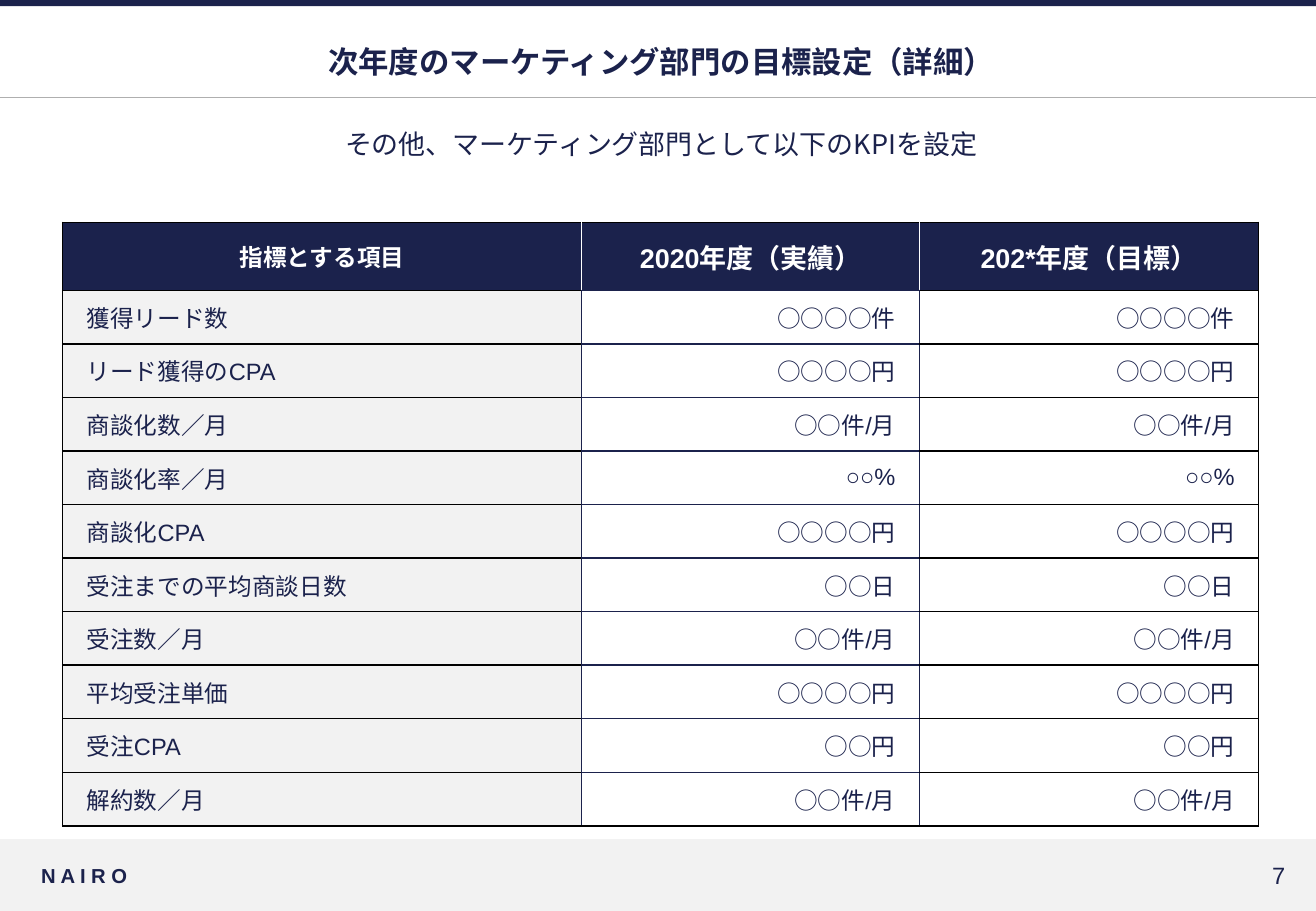
import pptx
import pptx.dml.color
import pptx.enum.shapes
import pptx.enum.text
import pptx.oxml
import pptx.oxml.ns
import pptx.util
from dataclasses import dataclass

Cm, Pt = pptx.util.Cm, pptx.util.Pt
ALIGN = pptx.enum.text.PP_ALIGN
ANCHOR = pptx.enum.text.MSO_ANCHOR
qn = pptx.oxml.ns.qn


@dataclass(frozen=True)
class Theme:
    navy: str = "1B224C"
    pale: str = "F2F2F2"
    white: str = "FFFFFF"
    black: str = "000000"
    rule: str = "AFAFAF"
    latin: str = "Arial"
    cjk: str = "Noto Sans CJK JP"
    title: int = 18
    lead: int = 16
    body: int = 14
    brand: int = 12


THEME = Theme()
WIDTH, HEIGHT = 27.51, 19.05
COLUMNS = (10.85, 7.06, 7.09)
HEADER_HEIGHT, ROW_HEIGHT = 1.42, 1.12

HEADER = (("指標とする項目", THEME.body), ("2020年度（実績）", THEME.lead),
          ("202*年度（目標）", THEME.lead))
# Each indicator with the value shown in both year columns
KPIS = (
    ("獲得リード数", "○○○○件"),
    ("リード獲得のCPA", "○○○○円"),
    ("商談化数／月", "○○件/月"),
    ("商談化率／月", "○○%"),
    ("商談化CPA", "○○○○円"),
    ("受注までの平均商談日数", "○○日"),
    ("受注数／月", "○○件/月"),
    ("平均受注単価", "○○○○円"),
    ("受注CPA", "○○円"),
    ("解約数／月", "○○件/月"),
)


def rgb(color):
    return pptx.dml.color.RGBColor.from_string(color)


def add_run(p, text, size, color=THEME.navy, bold=False, font=THEME.latin):
    r = p.add_run()
    r.text = text
    r.font.size, r.font.bold, r.font.name = Pt(size), bold, font
    r.font.color.rgb = rgb(color)
    ea = pptx.oxml.parse_xml(
        '<a:ea xmlns:a="http://schemas.openxmlformats.org/drawingml/2006/main"'
        f' typeface="{THEME.cjk}"/>')
    r.font._element.find(qn("a:latin")).addnext(ea)


def add_text(slide, box, text, size, align=ALIGN.LEFT, anchor=ANCHOR.MIDDLE,
             wrap=True, **style):
    sp = slide.shapes.add_textbox(*map(Cm, box))
    tf = sp.text_frame
    tf.word_wrap, tf.vertical_anchor = wrap, anchor
    tf.margin_left = tf.margin_right = Cm(0.1)
    tf.margin_top = tf.margin_bottom = Cm(0.1)
    p = tf.paragraphs[0]
    p.alignment = align
    add_run(p, text, size, **style)


def add_band(slide, box, color):
    sp = slide.shapes.add_shape(
        pptx.enum.shapes.MSO_SHAPE.RECTANGLE, *map(Cm, box))
    sp.shadow.inherit = False
    sp.fill.solid()
    sp.fill.fore_color.rgb = rgb(color)
    sp.line.fill.background()


def set_borders(cell, **colors):
    """Give the cell 1 pt borders, placed ahead of its fill."""
    tcPr = cell._tc.get_or_add_tcPr()
    for i, side in enumerate("LRTB"):
        tcPr.insert(i, pptx.oxml.parse_xml(
            f'<a:ln{side} xmlns:a="http://schemas.openxmlformats.org/drawingml/2006/main"'
            f' w="12700"><a:solidFill><a:srgbClr val="{colors[side]}"/></a:solidFill>'
            f'</a:ln{side}>'))


def fill_cell(cell, text, size, align, fill, margin, **style):
    cell.fill.solid()
    cell.fill.fore_color.rgb = rgb(fill)
    cell.vertical_anchor = ANCHOR.MIDDLE
    cell.margin_left = cell.margin_right = Cm(0.5)
    cell.margin_top = cell.margin_bottom = Cm(margin)
    p = cell.text_frame.paragraphs[0]
    p.alignment = align
    add_run(p, text, size, **style)


def add_heading(slide, left, top, width):
    # Top band, title and the rule below it
    add_band(slide, (0, 0, WIDTH, 0.13), THEME.navy)
    add_text(slide, (left, top, width, 1), "次年度のマーケティング部門の目標設定（詳細）",
             THEME.title, ALIGN.CENTER, bold=True, font=THEME.cjk)
    y = Cm(top + 1.24)
    line = slide.shapes.add_connector(
        pptx.enum.shapes.MSO_CONNECTOR.STRAIGHT, 0, y, Cm(WIDTH), y)
    line.line.color.rgb, line.line.width = rgb(THEME.rule), Pt(0.5)
    line._element.spPr.append(pptx.oxml.parse_xml(
        '<a:effectLst xmlns:a="http://schemas.openxmlformats.org/drawingml/2006/main"/>'))
    # Lead sentence
    add_text(slide, (left, top + 1.78, width, 1.8),
             "その他、マーケティング部門として以下のKPIを設定", THEME.lead,
             ALIGN.CENTER, ANCHOR.TOP, font=THEME.cjk)


def add_kpi_table(slide, left, top, width):
    height = HEADER_HEIGHT + ROW_HEIGHT * len(KPIS)
    frame = slide.shapes.add_table(
        len(KPIS) + 1, len(COLUMNS), Cm(left), Cm(top), Cm(width), Cm(height))
    table = frame.table
    table.first_row = table.horz_banding = False
    for column, column_width in zip(table.columns, COLUMNS):
        column.width = Cm(column_width)
    for i, row in enumerate(table.rows):
        row.height = Cm(ROW_HEIGHT if i else HEADER_HEIGHT)

    # Header row
    for j, (text, size) in enumerate(HEADER):
        fill_cell(table.cell(0, j), text, size, ALIGN.CENTER, THEME.navy, 0.3,
                  color=THEME.white, bold=True)
    # Indicator rows
    for i, (name, value) in enumerate(KPIS, 1):
        fill_cell(table.cell(i, 0), name, THEME.body, ALIGN.LEFT, THEME.pale, 0.2)
        for j in (1, 2):
            fill_cell(table.cell(i, j), value, THEME.body, ALIGN.RIGHT,
                      THEME.white, 0.2)
    # Borders: black outside, white between headers, navy around the middle column
    last = len(COLUMNS) - 1
    for i in range(len(KPIS) + 1):
        inner = THEME.navy if i else THEME.white
        for j in range(len(COLUMNS)):
            level = THEME.navy if j == 1 else THEME.black
            set_borders(table.cell(i, j),
                        L=inner if j else THEME.black,
                        R=inner if j < last else THEME.black,
                        T=level if i else THEME.black,
                        B=level if i < len(KPIS) else THEME.black)


def add_footer(slide, top, height):
    add_band(slide, (0, top, WIDTH, height), THEME.pale)
    y = top + 0.36
    add_text(slide, (0.76, y, 2.72, 0.79), "N A I R O", THEME.brand,
             wrap=False, bold=True)
    add_text(slide, (24.26, y, 2.71, 0.79), "7", THEME.body, ALIGN.RIGHT)


def main():
    prs = pptx.Presentation()
    prs.slide_width, prs.slide_height = Cm(WIDTH), Cm(HEIGHT)
    slide = prs.slides.add_slide(prs.slide_layouts[6])
    add_footer(slide, 17.55, 1.5)
    add_heading(slide, 1.32, 0.79, 25)
    add_kpi_table(slide, 1.31, 4.65, sum(COLUMNS))
    prs.save("out.pptx")


if __name__ == "__main__":
    main()
